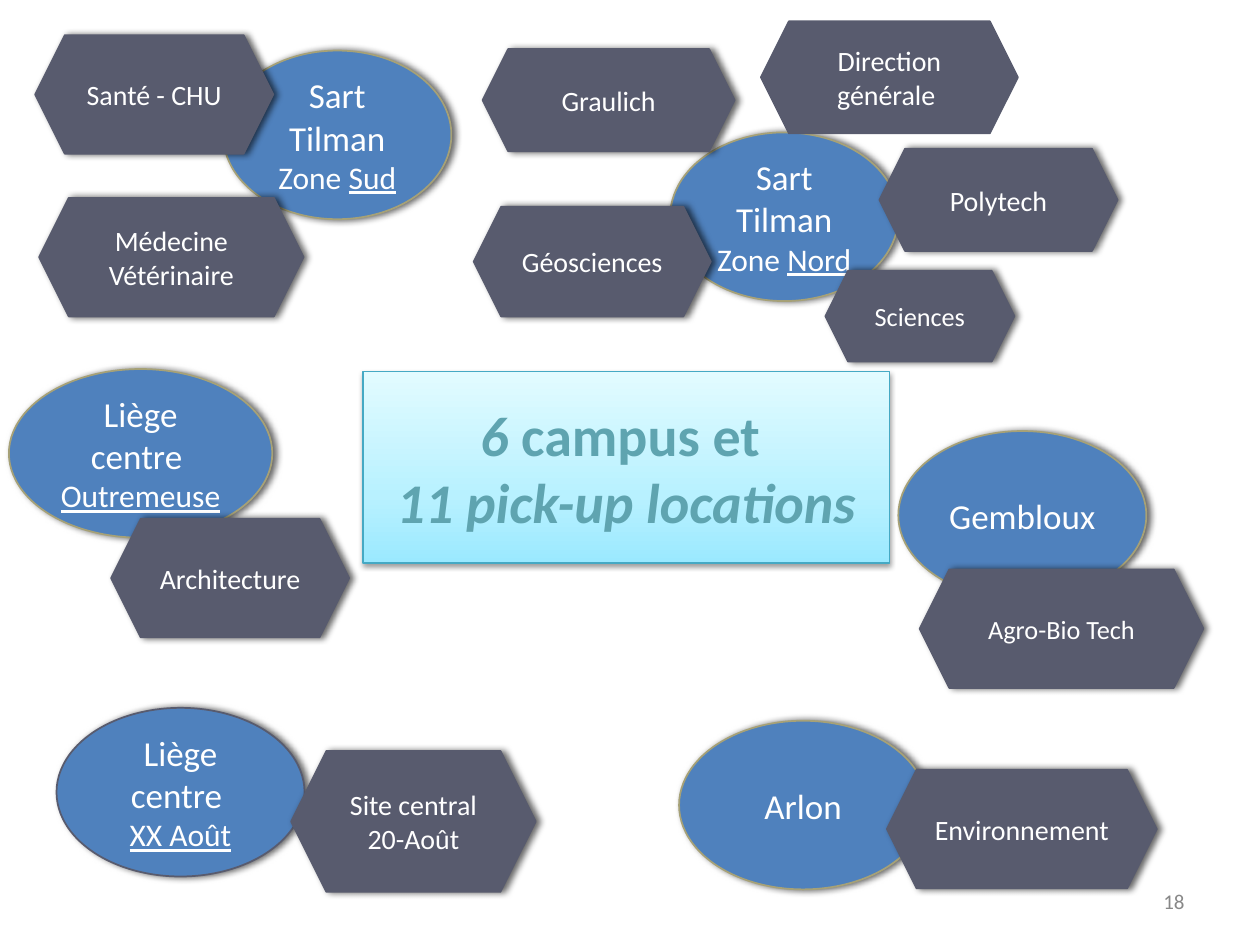
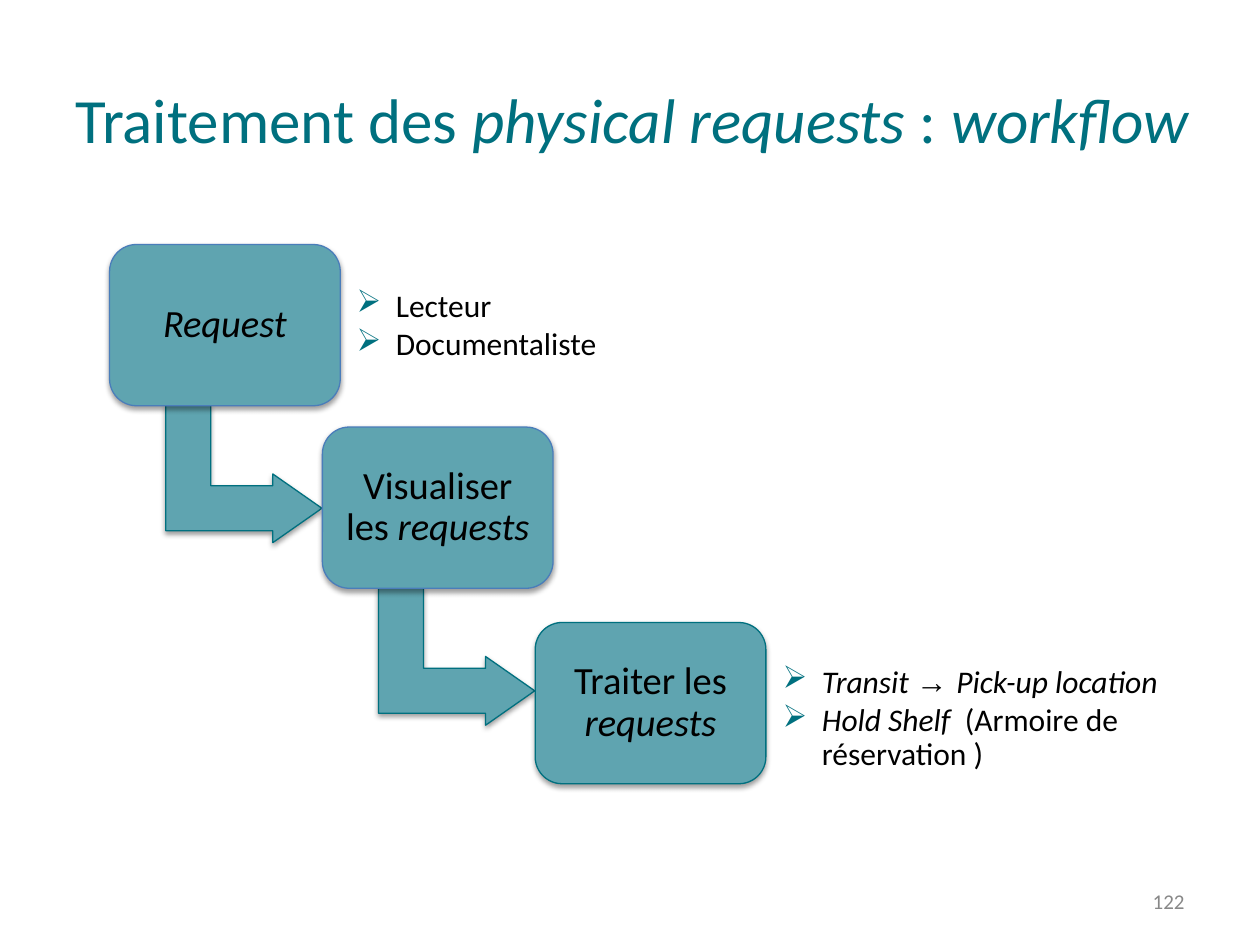
"""Build two slides: the campus map and the request workflow."""
import copy
from dataclasses import dataclass, replace
from typing import NamedTuple

import lxml.etree
import pptx
import pptx.dml.color
import pptx.enum.shapes
import pptx.enum.text
import pptx.oxml.ns
import pptx.shapes.autoshape
import pptx.slide
import pptx.text.text
import pptx.util

Cm = pptx.util.Cm
Pt = pptx.util.Pt
Kind = pptx.enum.shapes.MSO_SHAPE
Align = pptx.enum.text.PP_ALIGN
qn = pptx.oxml.ns.qn

COLORS = {
    "campus": "4F81BD", "campus_edge": "A6A177", "site": "585B6E",
    "step": "5FA4B0", "step_edge": "4A7DBA", "accent": "00707F",
    "banner_edge": "45A9C4", "banner_low": "9BE9FF", "banner_mid": "B8F1FF",
    "banner_high": "E2FBFF", "white": "FFFFFF", "black": "000000", "number": "888888",
}
FONT = "Calibri"


class Area(NamedTuple):
    left: float
    top: float
    width: float
    height: float


class Shadow(NamedTuple):
    alpha: int
    blur: float
    distance: float
    angle: int


class Span(NamedTuple):
    text: str
    size: float
    italic: bool = False
    underline: bool = False
    bold: bool = False
    font: str = FONT


Lines = list[list[Span]]


@dataclass(frozen=True)
class TextStyle:
    color: str
    align: Align = Align.CENTER
    inset_x: float = 0.25
    inset_y: float = 0.13
    spacing: float = 1.0
    bulleted: bool = False


@dataclass(frozen=True)
class ShapeStyle:
    kind: Kind
    fill: str
    line: str
    line_width: float
    shadow: Shadow | None


@dataclass(frozen=True)
class Node:
    area: Area
    lines: Lines
    edge: str


SIDE_SHADOW = Shadow(60, 4, 2, 0)
DROP_SHADOW = Shadow(38, 3.1, 1.6, 90)
CAMPUS = ShapeStyle(Kind.OVAL, "campus", "campus_edge", 1, SIDE_SHADOW)
SITE = ShapeStyle(Kind.HEXAGON, "site", "site", 1, SIDE_SHADOW)
BANNER = ShapeStyle(Kind.RECTANGLE, "banner_mid", "banner_edge", 0.75, DROP_SHADOW)
STEP = ShapeStyle(Kind.ROUNDED_RECTANGLE, "step", "step_edge", 0.75, DROP_SHADOW)
ARROW = ShapeStyle(Kind.BENT_UP_ARROW, "step", "accent", 0.75, DROP_SHADOW)

WHITE_TEXT = TextStyle("white")
STEP_TEXT = TextStyle("black", inset_x=0.23, inset_y=0.23, spacing=0.9)
LIST_TEXT = TextStyle("black", Align.LEFT, 0.18, 0.18, 0.9, True)

CAMPUS_HEIGHT = 3.4
CAMPUSES = [
    Node(Area(4.5, 1.02, 4.6, CAMPUS_HEIGHT),
         [[Span("Sart Tilman ", 20), Span("Zone ", 18), Span("Sud", 18, underline=True)]],
         "campus_edge"),
    Node(Area(13.51, 2.67, 4.6, CAMPUS_HEIGHT),
         [[Span("Sart Tilman ", 20), Span("Zone ", 18), Span("Nord", 18, underline=True)]],
         "campus_edge"),
    Node(Area(18.11, 8.69, 5, CAMPUS_HEIGHT), [[Span("Gembloux", 20)]], "campus_edge"),
    Node(Area(13.69, 14.53, 5, CAMPUS_HEIGHT), [[Span("Arlon", 20)]], "campus_edge"),
    Node(Area(1.14, 14.27, 5, CAMPUS_HEIGHT),
         [[Span("Liège centre ", 20)], [Span("XX Août", 18, underline=True)]], "site"),
    Node(Area(0.18, 7.44, 5.31, CAMPUS_HEIGHT),
         [[Span("Liège centre ", 20)], [Span("Outremeuse", 18, underline=True)]],
         "campus_edge"),
]
SITES = [
    ("Agro-Bio Tech", 15, Area(18.54, 11.48, 5.72, 2.39)),
    ("Environnement", 16, Area(17.88, 15.52, 5.44, 2.39)),
    ("Santé - CHU", 16, Area(0.71, 0.71, 4.8, 2.39)),
    ("Graulich", 16, Area(9.73, 0.99, 5.08, 2.06)),
    ("Sciences", 15, Area(16.64, 5.46, 3.81, 1.83)),
    ("Polytech", 16, Area(17.73, 3, 4.8, 2.06)),
    ("Géosciences", 16, Area(9.55, 4.17, 4.78, 2.21)),
    ("Direction générale ", 16, Area(15.34, 0.43, 5.18, 2.26)),
    ("Architecture", 16, Area(2.24, 10.46, 4.8, 2.39)),
    ("Site central 20-Août", 16, Area(5.87, 15.14, 4.93, 2.84)),
    ("Médecine Vétérinaire", 16, Area(0.79, 3.99, 5.33, 2.39)),
]
UNSHADED_SITE = "Direction générale "

STEP_LEFT, STEP_PITCH = 2.21, 4.29
STEPS = [
    (4.93, "step_edge", [[Span("Request", 22, italic=True)]]),
    (8.61, "step_edge", [[Span("Visualiser les ", 22), Span("requests", 22, italic=True)]]),
    (12.55, "accent", [[Span("Traiter les ", 22), Span("requests", 22, italic=True)]]),
]
STEP_LISTS = [
    (Area(7.01, 5.21, 5.66, 2.74), [[Span("Lecteur", 18)], [Span("Documentaliste", 18)]]),
    (Area(15.6, 12.57, 8.71, 3.86), [
        [Span("Transit ", 18, italic=True), Span("→ ", 18, font="Arial"),
         Span("Pick-up location", 18, italic=True)],
        [Span("Hold Shelf ", 18, italic=True), Span(" (Armoire de réservation )", 18)],
    ]),
]


def rgb(name: str) -> pptx.dml.color.RGBColor:
    """Return the named colour."""
    return pptx.dml.color.RGBColor.from_string(COLORS[name])


def add_bullet(para: pptx.text.text._Paragraph) -> None:
    """Give a paragraph a hanging arrowhead bullet."""
    properties = para._p.get_or_add_pPr()
    properties.set("marL", str(Cm(0.79)))
    properties.set("indent", str(-Cm(0.79)))
    tint = lxml.etree.SubElement(properties, qn("a:buClr"))
    lxml.etree.SubElement(tint, qn("a:srgbClr"), val=COLORS["accent"])
    lxml.etree.SubElement(properties, qn("a:buChar"), char="➢")


def write_text(frame: pptx.text.text.TextFrame, lines: Lines, style: TextStyle) -> None:
    """Write the lines span by span."""
    frame.word_wrap = True
    frame.vertical_anchor = pptx.enum.text.MSO_ANCHOR.MIDDLE
    frame.margin_left = frame.margin_right = Cm(style.inset_x)
    frame.margin_top = frame.margin_bottom = Cm(style.inset_y)
    for index, line in enumerate(lines):
        para = frame.add_paragraph() if index else frame.paragraphs[0]
        if style.bulleted:
            add_bullet(para)
            if index:
                para.space_before = Pt(2.7)
        para.alignment = style.align
        para.line_spacing = style.spacing
        for span in line:
            run = para.add_run()
            run.text = span.text
            run.font.name = span.font
            run.font.size = Pt(span.size)
            run.font.bold = span.bold
            run.font.italic = span.italic
            run.font.underline = span.underline
            run.font.color.rgb = rgb(style.color)


def add_text(page: pptx.slide.Slide, area: Area, lines: Lines, style: TextStyle) -> None:
    """Add a text box."""
    box = page.shapes.add_textbox(*map(Cm, area))
    write_text(box.text_frame, lines, style)


def cast_shadow(shape: pptx.shapes.autoshape.Shape, shadow: Shadow) -> None:
    """Add an outer shadow to a shape."""
    effects = shape.element.spPr.find(qn("a:effectLst"))
    outer = lxml.etree.SubElement(
        effects, qn("a:outerShdw"), blurRad=str(Pt(shadow.blur)),
        dist=str(Pt(shadow.distance)), dir=str(shadow.angle * 60000), rotWithShape="0")
    tint = lxml.etree.SubElement(outer, qn("a:srgbClr"), val=COLORS["black"])
    lxml.etree.SubElement(tint, qn("a:alpha"), val=str(shadow.alpha * 1000))


def add_shape(page: pptx.slide.Slide, area: Area,
              style: ShapeStyle) -> pptx.shapes.autoshape.Shape:
    """Add a filled, outlined shape."""
    shape = page.shapes.add_shape(style.kind, *map(Cm, area))
    shape.fill.solid()
    shape.fill.fore_color.rgb = rgb(style.fill)
    shape.line.color.rgb = rgb(style.line)
    shape.line.width = Pt(style.line_width)
    shape.shadow.inherit = False
    if style.shadow:
        cast_shadow(shape, style.shadow)
    return shape


def add_page(deck, number: int) -> pptx.slide.Slide:
    """Add a blank page with its number."""
    page = deck.slides.add_slide(deck.slide_layouts[6])
    add_text(page, Area(18.21, 17.65, 5.92, 1.02), [[Span(str(number), 12)]],
             TextStyle("number", Align.RIGHT))
    return page


def add_banner(page: pptx.slide.Slide) -> None:
    """Add the central gradient banner."""
    banner = add_shape(page, Area(7.32, 7.49, 10.62, 3.86), BANNER)
    banner.fill.gradient()
    banner.fill.gradient_angle = 90
    stops = banner.element.spPr.find(qn("a:gradFill")).find(qn("a:gsLst"))
    stops.insert(1, copy.deepcopy(stops[0]))
    shades = [(0, "banner_low"), (0.35, "banner_mid"), (1, "banner_high")]
    for stop, (position, color) in zip(banner.fill.gradient_stops, shades):
        stop.position = position
        stop.color.rgb = rgb(color)
    lines = [[Span("6 ", 32, italic=True, bold=True), Span("campus et ", 32, bold=True)],
             [Span("11 pick-up locations", 32, italic=True, bold=True)]]
    write_text(banner.text_frame, lines, TextStyle("step"))


def build_campus_map(deck) -> None:
    """Draw the campuses and their pick-up sites."""
    page = add_page(deck, 18)
    for campus in CAMPUSES:
        oval = add_shape(page, campus.area, replace(CAMPUS, line=campus.edge))
        write_text(oval.text_frame, campus.lines, WHITE_TEXT)
    for label, size, area in SITES:
        shadow = None if label == UNSHADED_SITE else SIDE_SHADOW
        hexagon = add_shape(page, area, replace(SITE, shadow=shadow))
        write_text(hexagon.text_frame, [[Span(label, size)]], WHITE_TEXT)
    add_banner(page)


def build_workflow(deck) -> None:
    """Draw the staircase of request steps."""
    page = add_page(deck, 122)
    title = [Span("Traitement des ", 36), Span("physical requests", 36, italic=True),
             Span(" : ", 36), Span("workflow", 36, italic=True)]
    add_text(page, Area(1.27, 1.55, 23.22, 1.68), [title], TextStyle("accent", Align.LEFT))
    for index, (top, edge, lines) in enumerate(STEPS):
        left = STEP_LEFT + index * STEP_PITCH
        if index < len(STEPS) - 1:
            arrow = add_shape(page, Area(left + 1.32, top + 3.05, 2.77, 3.15), ARROW)
            arrow.rotation = 90
            for position, value in enumerate((0.328, 0.25, 0.358)):
                arrow.adjustments[position] = value
        step = add_shape(page, Area(left, top, 4.65, 3.25), replace(STEP, line=edge))
        write_text(step.text_frame, lines, STEP_TEXT)
    for area, lines in STEP_LISTS:
        add_text(page, area, lines, LIST_TEXT)


def main() -> None:
    """Build and save the deck."""
    deck = pptx.Presentation()
    deck.slide_width, deck.slide_height = Cm(25.4), Cm(19.05)
    build_campus_map(deck)
    build_workflow(deck)
    deck.save("out.pptx")


if __name__ == "__main__":
    main()
